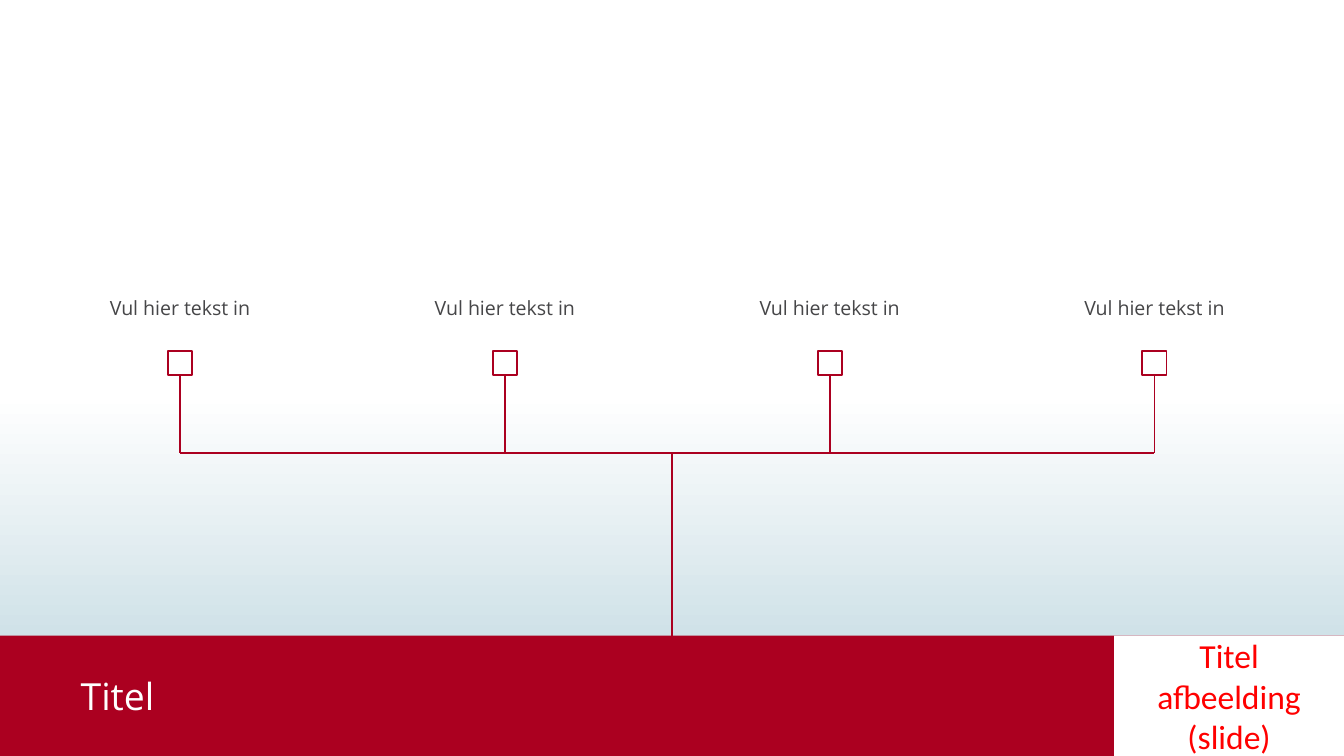
import pptx
import pptx.dml.color
import pptx.enum.shapes
import pptx.enum.text
import pptx.oxml.ns
import pptx.util
from lxml import etree

Inches = pptx.util.Inches
Pt = pptx.util.Pt
ALIGN = pptx.enum.text.PP_ALIGN
MIDDLE = pptx.enum.text.MSO_ANCHOR.MIDDLE

COLORS = {
    "red": "AB0020",
    "mist": "B8D3DC",
    "white": "FFFFFF",
    "label": "464648",
    "caption": "FF0000",
}
LABELS = ["Vul hier tekst in"] * 4
FIRST_CENTER, LAST_CENTER = 1.34, 8.59
BOX_TOP, BOX_SIZE = 2.61, 0.18
RAIL_TOP, BAND_TOP = 3.37, 4.73
SLIDE_WIDTH = 10
SLIDE_HEIGHT = SLIDE_WIDTH * 9 / 16
BAND_HEIGHT = SLIDE_HEIGHT - BAND_TOP


def rgb(name):
    return pptx.dml.color.RGBColor.from_string(COLORS[name])


def write(frame, text, size, font, color, align):
    frame.text = text
    frame.word_wrap = True
    paragraph = frame.paragraphs[0]
    paragraph.alignment = align
    for run in paragraph.runs:
        run.font.size = Pt(size)
        run.font.name = font
        run.font.color.rgb = rgb(color)


def add_rect(slide, left, top, width, height, fill=None, line=None):
    rect = slide.shapes.add_shape(
        pptx.enum.shapes.MSO_SHAPE.RECTANGLE,
        Inches(left), Inches(top), Inches(width), Inches(height))
    rect.shadow.inherit = False
    if fill:
        rect.fill.solid()
        rect.fill.fore_color.rgb = rgb(fill)
    else:
        rect.fill.background()
    if line:
        rect.line.color.rgb = rgb(line)
        rect.line.width = Pt(1)
    else:
        rect.line.fill.background()
    return rect


def add_line(slide, x1, y1, x2, y2):
    line = slide.shapes.add_connector(
        pptx.enum.shapes.MSO_CONNECTOR.STRAIGHT,
        Inches(x1), Inches(y1), Inches(x2), Inches(y2))
    line.line.color.rgb = rgb("red")
    line.line.width = Pt(1)
    etree.SubElement(line._element.spPr, pptx.oxml.ns.qn("a:effectLst"))


def add_backdrop(slide):
    """Fade from the bottom upwards, with the red title band over it."""
    fade = add_rect(slide, 0, 0.9, SLIDE_WIDTH, SLIDE_HEIGHT - 0.9)
    fade.fill.gradient()
    fade.fill.gradient_angle = 90
    stops = [(0, "mist"), (0.57, "white")]
    for stop, (position, color) in zip(fade.fill.gradient_stops, stops):
        stop.position = position
        stop.color.rgb = rgb(color)
    add_rect(slide, 0, BAND_TOP, SLIDE_WIDTH, BAND_HEIGHT, fill="red")


def set_title(slide, text):
    title = slide.shapes.title
    title.left, title.top = Inches(0.5), Inches(BAND_TOP)
    title.width, title.height = Inches(9), Inches(BAND_HEIGHT)
    write(title.text_frame, text, 20, "Open Sans", "white", ALIGN.LEFT)
    title.text_frame.vertical_anchor = MIDDLE
    slide.shapes._spTree.append(title._element)  # in front of the band


def add_branch(slide, center, text):
    """Label, open square and the stem down to the rail."""
    label = slide.shapes.add_textbox(
        Inches(center - 1.01), Inches(2.15), Inches(2.02), Inches(0.28))
    write(label.text_frame, text, 10.5, "Open Sans", "label", ALIGN.CENTER)
    label.text_frame.auto_size = pptx.enum.text.MSO_AUTO_SIZE.SHAPE_TO_FIT_TEXT
    add_rect(slide, center - BOX_SIZE / 2, BOX_TOP, BOX_SIZE, BOX_SIZE, line="red")
    add_line(slide, center, BOX_TOP + BOX_SIZE, center, RAIL_TOP)


def add_caption(slide, text):
    caption = add_rect(slide, 8.29, BAND_TOP, 1.71, BAND_HEIGHT, fill="white")
    write(caption.text_frame, text, 18, "Calibri", "caption", ALIGN.CENTER)
    caption.text_frame.vertical_anchor = MIDDLE


def main():
    deck = pptx.Presentation()
    deck.slide_width = Inches(SLIDE_WIDTH)
    deck.slide_height = Inches(SLIDE_HEIGHT)
    slide = deck.slides.add_slide(deck.slide_layouts[5])

    add_backdrop(slide)
    set_title(slide, "Titel")
    step = (LAST_CENTER - FIRST_CENTER) / (len(LABELS) - 1)
    for i, text in enumerate(LABELS):
        add_branch(slide, FIRST_CENTER + i * step, text)
    add_line(slide, FIRST_CENTER, RAIL_TOP, LAST_CENTER, RAIL_TOP)
    add_line(slide, SLIDE_WIDTH / 2, RAIL_TOP, SLIDE_WIDTH / 2, BAND_TOP)
    add_caption(slide, "Titel afbeelding (slide)")

    deck.save("out.pptx")


if __name__ == "__main__":
    main()
